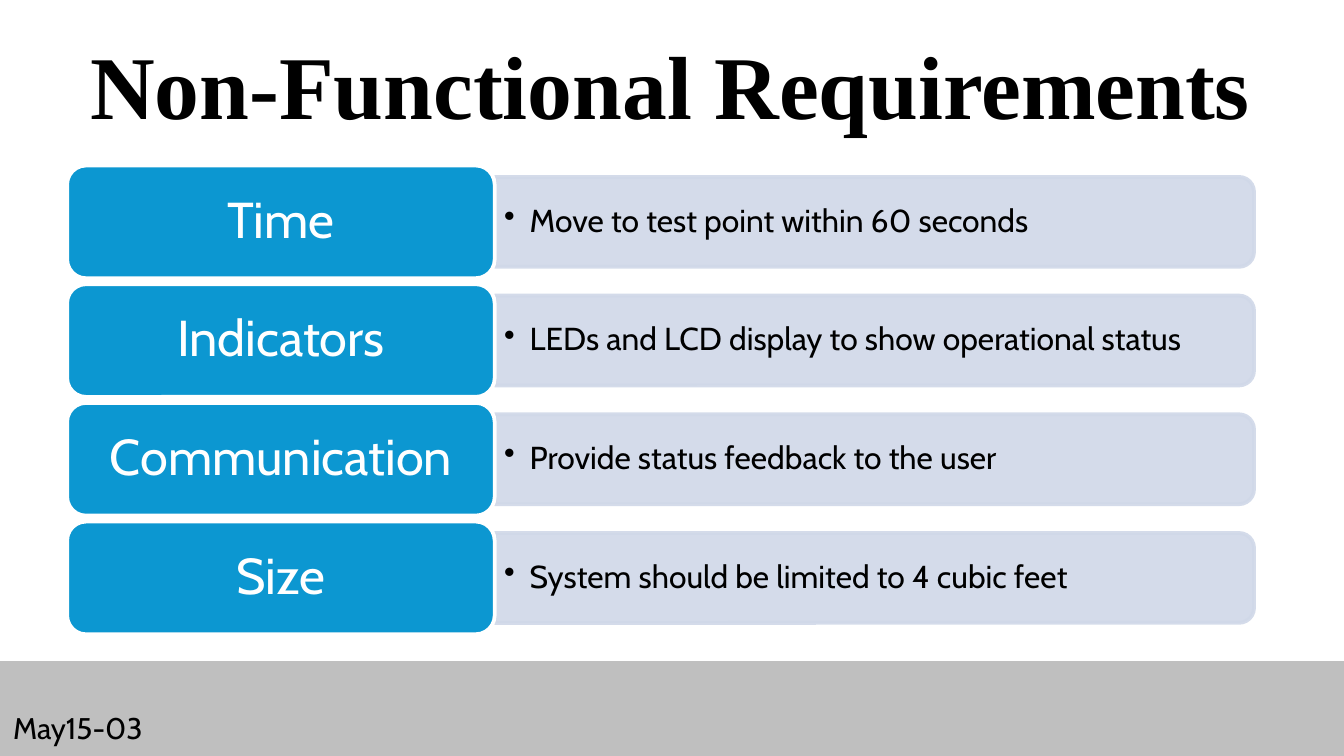
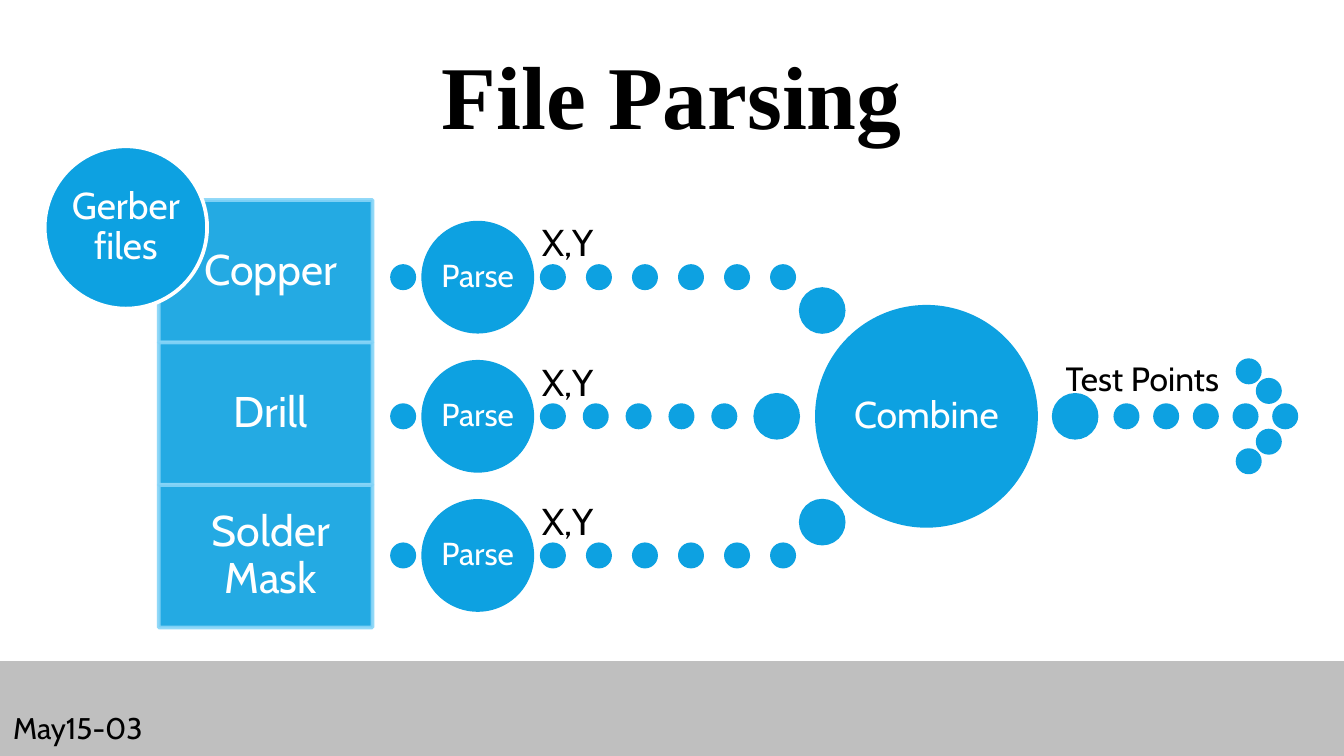
from dataclasses import dataclass

from lxml.etree import SubElement
from pptx import Presentation
from pptx.dml.color import RGBColor
from pptx.enum.shapes import MSO_SHAPE as Shape
from pptx.enum.text import MSO_ANCHOR as Anchor, MSO_AUTO_SIZE as AutoSize, PP_ALIGN as Align
from pptx.oxml.ns import qn
from pptx.util import Cm, Pt


@dataclass(frozen=True)
class Theme:
    heading: str = "Times New Roman"
    body: str = "Cabin"
    black: str = "000000"
    white: str = "FFFFFF"
    band: str = "BFBFBF"
    label: str = "0C97D1"
    detail: str = "D0D8E8"
    flow: str = "0DA1E1"
    cell_edge: str = "87D5F8"
    title_size: int = 48
    label_size: int = 27
    cell_size: int = 23
    flow_size: int = 20
    output_size: int = 18
    small_size: int = 17
    footer_size: int = 16
    line: int = 2


@dataclass(frozen=True)
class Box:
    """A region in centimetres."""
    x: float
    y: float
    w: float
    h: float

    def lengths(self):
        return Cm(self.x), Cm(self.y), Cm(self.w), Cm(self.h)


THEME = Theme()
DEFAULT_INSETS = (0.25, 0.13, 0.25, 0.13)
NO_INSETS = (0, 0, 0, 0)
DOT, BIG_DOT = 0.42, 0.81

REQUIREMENTS = [
    ("Time", "Move to test point within 60 seconds"),
    ("Indicators", "LEDs and LCD display to show operational status"),
    ("Communication", "Provide status feedback to the user"),
    ("Size", "System should be limited to 4 cubic feet"),
]
GERBER_LAYERS = ["Copper", "Drill", "Solder Mask"]


def write(s, text, size, color=THEME.white, font=THEME.body, bold=False, align=Align.CENTER,
          anchor=Anchor.MIDDLE, insets=DEFAULT_INSETS, spacing=0.9, wrap=True, bullet=False):
    tf = s.text_frame
    tf.text = text
    tf.word_wrap = wrap
    tf.auto_size = AutoSize.NONE
    tf.vertical_anchor = anchor
    tf.margin_left, tf.margin_top, tf.margin_right, tf.margin_bottom = map(Cm, insets)
    p = tf.paragraphs[0]
    p.alignment = align
    p.line_spacing = spacing
    if bullet:
        p.level = 1
        pPr = p._p.get_or_add_pPr()
        pPr.set("marL", str(Cm(0.48)))
        pPr.set("indent", str(-Cm(0.48)))
        SubElement(pPr, qn("a:buChar"), char="•")
    r = p.runs[0]
    r.font.name, r.font.size, r.font.bold = font, Pt(size), bold
    r.font.color.rgb = RGBColor.from_string(color)


def add_text(slide, box, text, size, color=THEME.black, align=Align.LEFT, **style):
    sp = slide.shapes.add_textbox(*box.lengths())
    write(sp, text, size, color, align=align, **style)


def add_filled(slide, kind, box, fill, edge=None, opacity=100):
    s = slide.shapes.add_shape(kind, *box.lengths())
    s.shadow.inherit = False
    s.fill.solid()
    s.fill.fore_color.rgb = RGBColor.from_string(fill)
    s.line.color.rgb = RGBColor.from_string(edge or fill)
    s.line.width = Pt(THEME.line)
    if opacity < 100:
        for color in s._element.spPr.iter(qn("a:srgbClr")):
            SubElement(color, qn("a:alpha"), val=str(opacity * 1000))
    return s


def add_disc(slide, x, y, diameter, text=None, size=THEME.flow_size, edge=None):
    """Draw a circle centred on (x, y)."""
    box = Box(x - diameter / 2, y - diameter / 2, diameter, diameter)
    s = add_filled(slide, Shape.OVAL, box, THEME.flow, edge)
    if text:
        write(s, text, size, insets=NO_INSETS, wrap=" " in text)


def add_dots(slide, x, y, step, count):
    for i in range(count):
        add_disc(slide, x + i * step, y, DOT)


def add_footer(slide, box):
    add_filled(slide, Shape.RECTANGLE, box, THEME.band)
    add_text(slide, Box(box.x, box.y + 0.74, 5.28, 0.94), "May15-03", THEME.footer_size,
             anchor=Anchor.TOP, spacing=1)


def add_title_slide(prs, title, box):
    slide = prs.slides.add_slide(prs.slide_layouts[5])
    add_footer(slide, Box(0, 12.54, 25.4, 1.75))
    s = slide.shapes.title
    s.left, s.top, s.width, s.height = box.lengths()
    write(s, title, THEME.title_size, THEME.black, THEME.heading, bold=True, spacing=1)
    return slide


def add_requirement(slide, box, label, detail):
    label_w, bar_h, text_h = 8.08, 1.7, 1.55
    x, w, middle = box.x + label_w, box.w - label_w, box.y + box.h / 2
    # The bar is upright before its quarter turn, so its sides are swapped.
    upright = Box(x + (w - bar_h) / 2, middle - w / 2, bar_h, w)
    s = add_filled(slide, Shape.ROUND_2_SAME_RECTANGLE, upright, THEME.detail, opacity=90)
    s.rotation = 90
    add_text(slide, Box(x, middle - text_h / 2, w - 0.08, text_h), detail, THEME.small_size,
             insets=(0.18, 0.1, 0.18, 0.1), bullet=True)
    s = add_filled(slide, Shape.ROUNDED_RECTANGLE, Box(box.x, box.y, label_w, box.h),
                   THEME.label, THEME.white)
    write(s, label, THEME.label_size)


def add_requirements(slide, box):
    row_h = 2.13
    pitch = (box.h - row_h) / (len(REQUIREMENTS) - 1)
    for i, (label, detail) in enumerate(REQUIREMENTS):
        add_requirement(slide, Box(box.x, box.y + i * pitch, box.w, row_h), label, detail)


def add_gerber_stack(slide, box):
    cell_h = box.h / len(GERBER_LAYERS)
    for i, layer in enumerate(GERBER_LAYERS):
        s = add_filled(slide, Shape.RECTANGLE, Box(box.x, box.y + i * cell_h, box.w, cell_h),
                       THEME.flow, THEME.cell_edge, opacity=90)
        write(s, layer, THEME.cell_size, insets=(0.65, 0.46, 0.45, 0.46))
    add_disc(slide, box.x - 0.62, box.y + 0.52, 3.07, "Gerber files", edge=THEME.white)


def add_parse_row(slide, x, y, step, count):
    """Draw one parser, the dot before it and the dots that leave it."""
    add_disc(slide, x, y, DOT)
    add_disc(slide, x + 1.41, y, 2.06, "Parse", THEME.small_size)
    add_dots(slide, x + 2.83, y, step, count)
    add_text(slide, Box(x + 2.62, y - 1.27, 3.63, 1.04), "X,Y", THEME.flow_size,
             anchor=Anchor.BOTTOM, insets=NO_INSETS)


def add_output(slide, x, y):
    add_disc(slide, x, y, BIG_DOT)
    add_dots(slide, x + 0.97, y, 0.75, 5)
    for side in (-1, 1):
        add_disc(slide, x + 3.28, y + side * 0.85, DOT)
        add_disc(slide, x + 3.66, y + side * 0.48, DOT)
    add_text(slide, Box(x - 0.43, y - 1.24, 3.71, 1.02), "Test Points", THEME.output_size,
             anchor=Anchor.TOP, spacing=1)


def add_parsing_flow(slide, box):
    x, middle, pitch = box.x + DOT / 2, box.y + box.h / 2, 2.63
    for side in (-1, 0, 1):
        step, count = (0.87, 6) if side else (0.81, 5)
        add_parse_row(slide, x, middle + side * pitch, step, count)
        add_disc(slide, x + (7.92 if side else 7.06), middle + side * 2, BIG_DOT)
    add_disc(slide, x + 9.89, middle, 4.14, "Combine")
    add_output(slide, x + 12.7, middle)


def main():
    prs = Presentation()
    prs.slide_width, prs.slide_height = Cm(25.4), Cm(14.29)

    slide = add_title_slide(prs, "Non-Functional Requirements", Box(1.24, 0.38, 22.86, 2.39))
    add_requirements(slide, Box(1.27, 3.13, 22.43, 8.86))

    slide = add_title_slide(prs, "File Parsing", Box(1.27, 0.58, 22.86, 2.39))
    add_gerber_stack(slide, Box(3, 3.78, 4.04, 8.08))
    add_parsing_flow(slide, Box(7.41, 4.21, 17.08, 7.32))

    prs.save("out.pptx")


if __name__ == "__main__":
    main()
